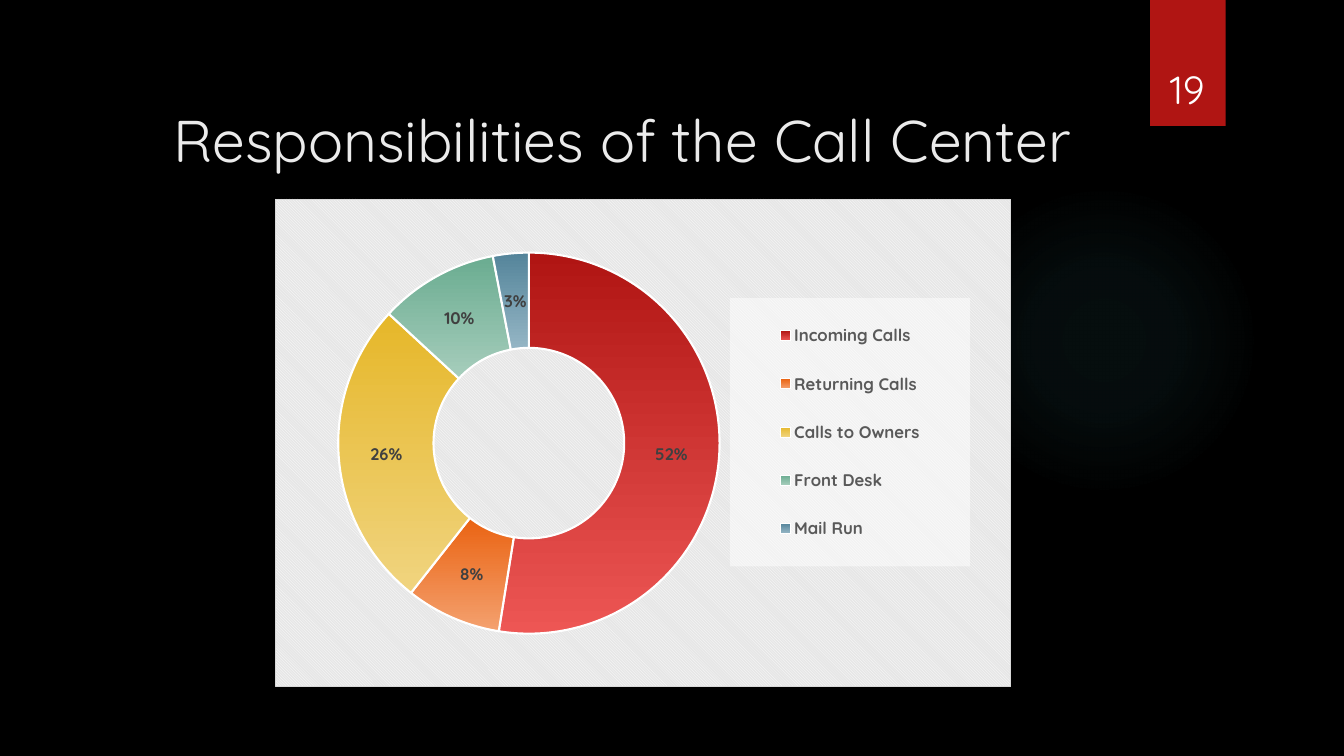
from lxml import etree
from pptx import Presentation
from pptx.chart.data import CategoryChartData as Data
from pptx.dml.color import RGBColor as Rgb
from pptx.enum.chart import XL_CHART_TYPE as Kind, XL_LEGEND_POSITION as Side
from pptx.enum.shapes import MSO_SHAPE as Form
from pptx.enum.text import MSO_ANCHOR as Anchor, PP_ALIGN as Align
from pptx.oxml import parse_xml
from pptx.oxml.ns import nsdecls, qn
from pptx.util import Pt

HUES = {
    "back": "000000", "glow": "50B9C1", "red": "B01513", "title": "EBEBEB",
    "white": "FFFFFF", "panel": "E6E6E6", "edge": "D9D9D9",
    "key": "595959", "label": "404040",
}
# Name, share in percent, top colour, bottom colour
DUTIES = [
    ("Incoming Calls", 52, "B01513", "ED5654"),
    ("Returning Calls", 8, "EA6312", "F4A16F"),
    ("Calls to Owners", 26, "E6B729", "F0D47F"),
    ("Front Desk", 10, "6AAC90", "A6CDBC"),
    ("Mail Run", 3, "54849A", "95B6C5"),
]


def rgb(name):
    return Rgb.from_string(HUES[name])


def tint(name, alpha=100):
    return (f'<a:srgbClr val="{HUES[name]}">'
            f'<a:alpha val="{alpha * 1000}"/></a:srgbClr>')


def node(tag, body, attrs=""):
    return parse_xml(f'<{tag} {nsdecls("a", "c")} {attrs}>{body}</{tag}>')


def place(part, index, left, top, width, height, inner=False):
    """Give a chart part a manual layout, as fractions of the chart."""
    for old in part.findall(qn("c:layout")):
        part.remove(old)
    body = '<c:layoutTarget val="inner"/>' if inner else ""
    body += '<c:xMode val="edge"/><c:yMode val="edge"/>'
    for key, val in zip("xywh", (left, top, width, height)):
        body += f'<c:{key} val="{val}"/>'
    part.insert(index, node("c:layout", f"<c:manualLayout>{body}</c:manualLayout>"))


class Deck:
    face = "Quicksand"

    def __init__(self):
        self.show = Presentation()
        self.show.slide_width, self.show.slide_height = Pt(960), Pt(540)
        self.slide = self.show.slides.add_slide(self.show.slide_layouts[5])
        fill = self.slide.background.fill
        fill.solid()
        fill.fore_color.rgb = rgb("back")

    def style(self, font, size, hue, bold=False):
        font.name, font.size, font.bold = self.face, Pt(size), bold
        font.color.rgb = rgb(hue)

    def letter(self, shape, words, size, hue, align, anchor):
        frame = shape.text_frame
        frame.word_wrap, frame.vertical_anchor = True, anchor
        para = frame.paragraphs[0]
        para.alignment = align
        run = para.add_run()
        run.text = words
        self.style(run.font, size, hue)

    def title(self, words, box):
        shape = self.slide.shapes.title
        shape.left, shape.top, shape.width, shape.height = map(Pt, box)
        self.letter(shape, words, 42, "title", Align.LEFT, Anchor.TOP)

    def text(self, words, box, size, hue):
        shape = self.slide.shapes.add_textbox(*map(Pt, box))
        self.letter(shape, words, size, hue, Align.CENTER, Anchor.BOTTOM)

    def shape(self, form, box, hue):
        shape = self.slide.shapes.add_shape(form, *map(Pt, box))
        shape.shadow.inherit = False
        shape.fill.solid()
        shape.fill.fore_color.rgb = rgb(hue)
        shape.line.fill.background()
        return shape

    def glow(self, box):
        props = self.shape(Form.OVAL, box, "glow")._element.spPr
        stops = "".join(f'<a:gs pos="{pos * 1000}">{tint("glow", alpha)}</a:gs>'
                        for pos, alpha in ((0, 7), (36, 6), (69, 0)))
        focus = '<a:fillToRect l="50000" t="50000" r="50000" b="50000"/>'
        fade = node("a:gradFill", f'<a:gsLst>{stops}</a:gsLst>'
                    f'<a:path path="circle">{focus}</a:path>')
        props.replace(props.find(qn("a:solidFill")), fade)

    def tab(self, box):
        props = self.shape(Form.RECTANGLE, box, "red")._element.spPr
        props.find(qn("a:effectLst")).append(node(
            "a:outerShdw", tint("back", 45),
            f'blurRad="{Pt(3)}" dist="{Pt(2)}" dir="5400000" rotWithShape="0"'))

    def ring(self, box):
        data = Data()
        data.categories = [duty[0] for duty in DUTIES]
        data.add_series("Series 1", [duty[1] for duty in DUTIES])
        chart = self.slide.shapes.add_chart(
            Kind.DOUGHNUT, *map(Pt, box), data).chart
        chart.has_title = False
        self.style(chart.font, 10, "white")
        self.slices(chart.plots[0].series[0])
        self.legend(chart)
        # Striped panel, plot position and hole
        root = chart._chartSpace
        if root.find(qn("c:roundedCorners")) is None:
            root.find(qn("c:date1904")).addnext(
                node("c:roundedCorners", "", 'val="0"'))
        root.find(qn("c:chart")).addnext(node(
            "c:spPr", f'<a:pattFill prst="dkDnDiag"><a:fgClr>{tint("white")}</a:fgClr>'
            f'<a:bgClr>{tint("panel")}</a:bgClr></a:pattFill>'
            f'<a:ln w="{Pt(0.75)}"><a:solidFill>{tint("edge")}</a:solidFill></a:ln>'))
        place(next(root.iter(qn("c:plotArea"))), 0, 0.085, 0.097, 0.519, 0.807, True)
        plot = next(root.iter(qn("c:doughnutChart")))
        hole = plot.find(qn("c:holeSize"))
        if hole is None:
            hole = etree.SubElement(plot, qn("c:holeSize"))
        hole.set("val", "70")

    def slices(self, series):
        for index, (_, _, *pair) in enumerate(DUTIES):
            look = series.points[index].format
            look.fill.gradient()
            look.fill.gradient_angle = 270
            for stop, hue in zip(look.fill.gradient_stops, pair):
                stop.color.rgb = Rgb.from_string(hue)
            look.line.width = Pt(1.5)
            look.line.color.rgb = rgb("white")
        labels = series.data_labels
        labels.show_value, labels.show_percentage = True, False
        labels.number_format, labels.number_format_is_linked = '0"%"', False
        self.style(labels.font, 12, "label", True)

    def legend(self, chart):
        chart.has_legend = True
        legend = chart.legend
        legend.position, legend.include_in_layout = Side.RIGHT, False
        self.style(legend.font, 12, "key", True)
        part = legend._element
        place(part, 1, 0.618, 0.203, 0.327, 0.55)
        part.find(qn("c:txPr")).addprevious(node(
            "c:spPr", f'<a:solidFill>{tint("white", 50)}</a:solidFill>'))


def main():
    deck = Deck()
    # Backdrop
    deck.glow((677.5, 131.8, 221.8, 221.8))
    deck.tab((821.5, 0, 54, 90))
    # Heading
    deck.title("Responsibilities of the Call Center", (116.6, 70.6, 707, 78.5))
    # Chart of duties
    deck.ring((196.6, 141.8, 525.6, 349.2))
    # Page number
    deck.text("19", (815, 23, 66.2, 60.5), 28, "white")
    deck.show.save("out.pptx")


if __name__ == "__main__":
    main()
